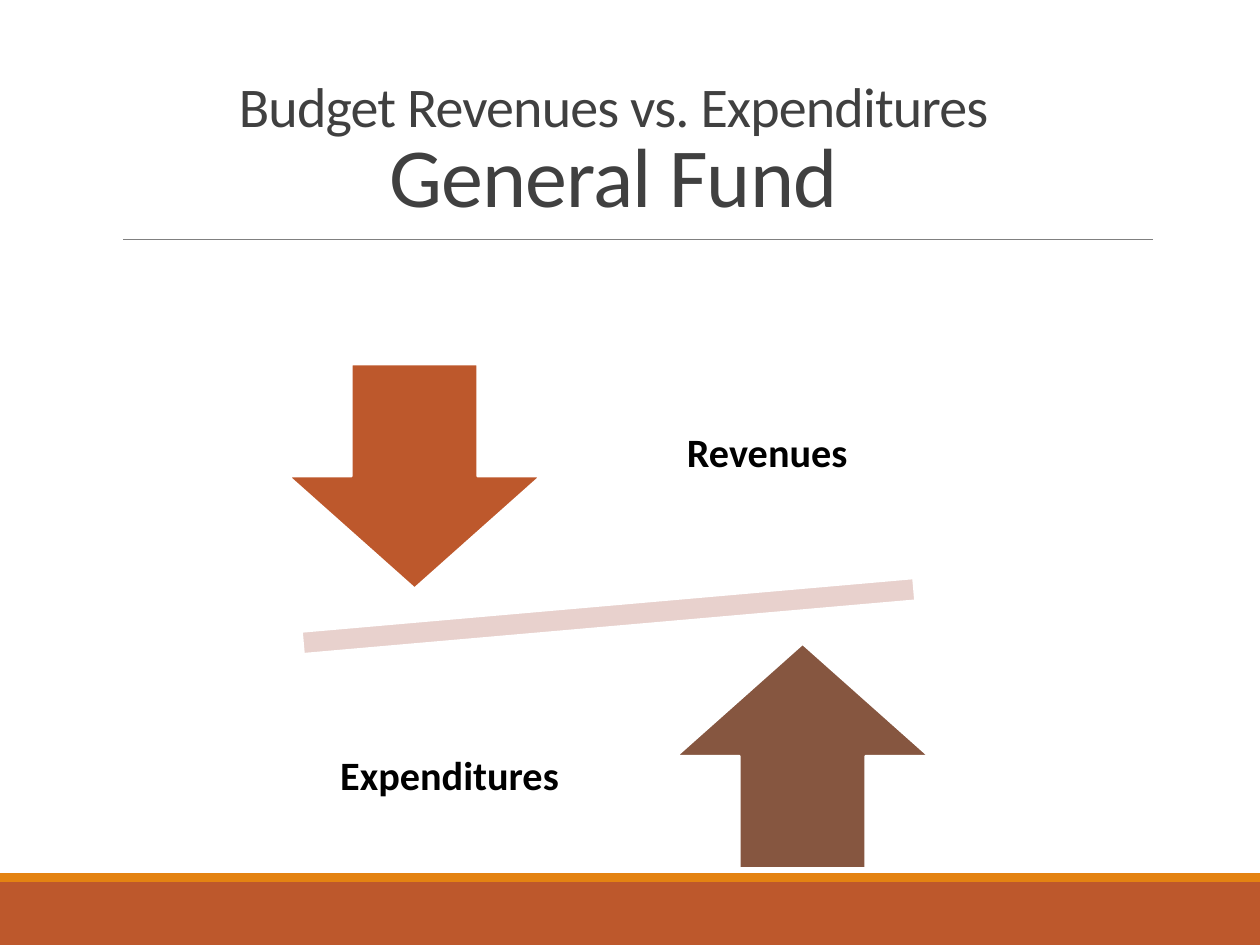
import pptx
import pptx.util
from lxml import etree
from pptx.dml.color import RGBColor
from pptx.enum.shapes import MSO_CONNECTOR, MSO_SHAPE
from pptx.enum.text import MSO_ANCHOR, MSO_AUTO_SIZE, PP_ALIGN
from pptx.oxml.ns import qn

COLORS = {
    "rust": "BD582C", "orange": "E48312", "brown": "865640", "pink": "E8D1CD",
    "rule": "808080", "title": "404040", "black": "000000", "white": "FFFFFF",
}
TITLE_LINES = [("Budget Revenues vs. Expenditures", 32), ("General Fund", 48)]
FORCES = [
    {"label": "Revenues", "arrow": MSO_SHAPE.DOWN_ARROW, "color": "rust", "side": -1},
    {"label": "Expenditures", "arrow": MSO_SHAPE.UP_ARROW, "color": "brown", "side": 1},
]
FONT = "Calibri"
WIDTH, HEIGHT = 10, 7.5
BAND_HEIGHT, STRIPE_HEIGHT = 0.5, 0.07
CENTER = (4.83, 4.89)
BEAM_SIZE, BEAM_ANGLE = (6.63, 0.76), 355
ARROW_SIZE, ARROW_OFFSET = (2, 1.78), (1.54, 1.11)
LABEL_SIZE, LABEL_OFFSET = (2.13, 1.87), (1.26, 1.28)


def inches(*values):
    return [pptx.util.Inches(value) for value in values]


def rgb(name):
    return RGBColor.from_string(COLORS[name])


def apply(target, **values):
    for name, value in values.items():
        setattr(target, name, value)


def centered(size, offset=(0, 0), side=1):
    corner = [c + side * o - s / 2 for c, o, s in zip(CENTER, offset, size)]
    return inches(*corner, *size)


def add_filled(page, kind, place, color, outline=None):
    shape = page.shapes.add_shape(kind, *place)
    shape.shadow.inherit = False
    shape.fill.solid()
    shape.fill.fore_color.rgb = rgb(color)
    if outline:
        shape.line.color.rgb = rgb(outline)
        shape.line.width = pptx.util.Pt(1.25)
    else:
        shape.line.fill.background()
    return shape


def add_span(para, text, size, color, bold=False):
    span = para.add_run()
    span.text = text
    apply(span.font, name=FONT, size=pptx.util.Pt(size), bold=bold)
    span.font.color.rgb = rgb(color)
    return span


def add_frame(page):
    band_top = HEIGHT - BAND_HEIGHT
    bands = [(band_top, BAND_HEIGHT, "rust"),
             (band_top - STRIPE_HEIGHT, STRIPE_HEIGHT, "orange")]
    for top, height, color in bands:
        add_filled(page, MSO_SHAPE.RECTANGLE, inches(0, top, WIDTH, height), color)
    rule = page.shapes.add_connector(MSO_CONNECTOR.STRAIGHT, *inches(0.98, 1.9, 9.15, 1.9))
    apply(rule.line, width=pptx.util.Pt(0.5))
    rule.line.color.rgb = rgb("rule")
    etree.SubElement(rule._element.spPr, qn("a:effectLst"))


def fill_title(page):
    title = page.shapes.title
    left, top, width, height = inches(0.33, 0.33, 9.08, 1.5)
    apply(title, left=left, top=top, width=width, height=height)
    apply(title.text_frame, vertical_anchor=MSO_ANCHOR.BOTTOM,
          word_wrap=True, auto_size=MSO_AUTO_SIZE.NONE)
    para = title.text_frame.paragraphs[0]
    apply(para, alignment=PP_ALIGN.CENTER, line_spacing=0.85)
    for index, (text, size) in enumerate(TITLE_LINES):
        if index:
            para.add_line_break()
            mark = etree.SubElement(para._p[-1], qn("a:rPr"))
            mark.set("sz", str(TITLE_LINES[index - 1][1] * 100))
        span = add_span(para, text, size, "title")
        span._r.get_or_add_rPr().set("spc", "-50")


def add_force(page, force):
    side = force["side"]
    add_filled(page, force["arrow"], centered(ARROW_SIZE, ARROW_OFFSET, side),
               force["color"], "white")
    box = page.shapes.add_textbox(*centered(LABEL_SIZE, LABEL_OFFSET, side)) \
        if LABEL_OFFSET[0] < 0 else page.shapes.add_textbox(
            *centered(LABEL_SIZE, (-LABEL_OFFSET[0], LABEL_OFFSET[1]), side))
    frame = box.text_frame
    apply(frame, word_wrap=True, vertical_anchor=MSO_ANCHOR.MIDDLE)
    for edge in ("left", "top", "right", "bottom"):
        setattr(frame, f"margin_{edge}", pptx.util.Inches(0.18))
    para = frame.paragraphs[0]
    apply(para, alignment=PP_ALIGN.CENTER, line_spacing=0.9)
    add_span(para, force["label"], 23, "black", bold=True)


def main():
    deck = pptx.Presentation()
    deck.slide_width, deck.slide_height = inches(WIDTH, HEIGHT)
    page = deck.slides.add_slide(deck.slide_layouts[5])
    add_frame(page)
    fill_title(page)
    beam = add_filled(page, MSO_SHAPE.MATH_MINUS, centered(BEAM_SIZE), "pink", "white")
    beam.rotation = BEAM_ANGLE
    for force in FORCES:
        add_force(page, force)
    deck.save("out.pptx")


if __name__ == "__main__":
    main()
